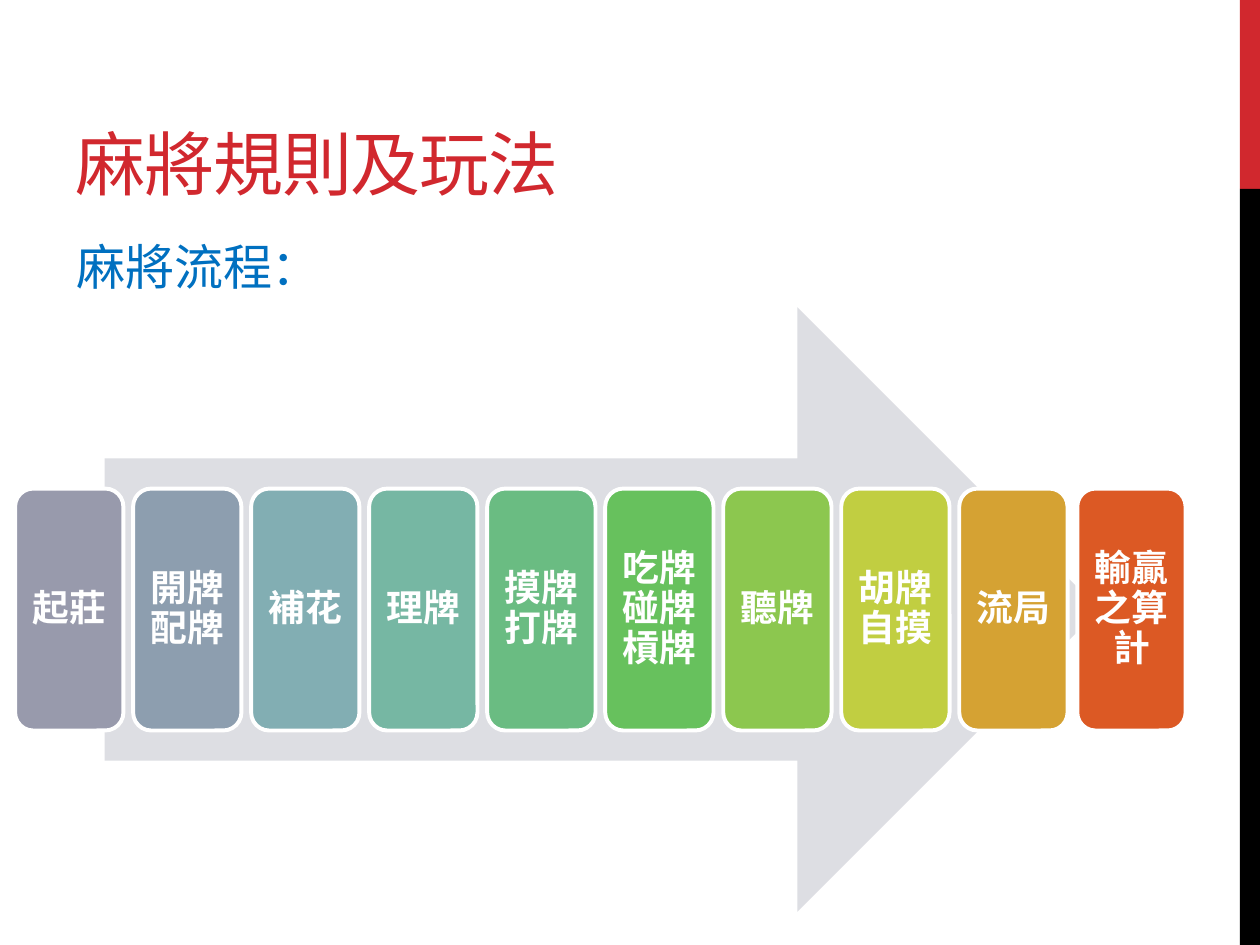
from dataclasses import dataclass

from pptx import Presentation, util as u
from pptx.dml.color import RGBColor
from pptx.enum import shapes, text

Pt = u.Pt


@dataclass(frozen=True)
class Theme:
    red: str = "D1282E"
    black: str = "000000"
    white: str = "FFFFFF"
    blue: str = "0070C0"
    arrow: str = "DDDEE3"
    heading_font: str = "Montserrat"
    body_font: str = "Arial"
    title_size: int = 40
    subtitle_size: int = 28
    step_size: int = 21


THEME = Theme()
STEPS = [
    ("起莊", "989AAC"),
    ("開牌配牌", "8D9EAF"),
    ("補花", "82AEB3"),
    ("理牌", "76B7A3"),
    ("摸牌打牌", "6ABC82"),
    ("吃牌碰牌槓牌", "67C15D"),
    ("聽牌", "8CC74F"),
    ("胡牌自摸", "C1CE41"),
    ("流局", "D5A233"),
    ("輸贏之算計", "DC5924"),
]


def write(shape, words, *, size, color, font=THEME.body_font, bold=False,
          align=text.PP_ALIGN.LEFT, anchor=text.MSO_ANCHOR.TOP,
          line_spacing=None, inset=None, tracking=None):
    frame = shape.text_frame
    frame.word_wrap = True
    frame.vertical_anchor = anchor
    if inset is not None:
        frame.margin_left = frame.margin_right = Pt(inset)
        frame.margin_top = frame.margin_bottom = Pt(inset)
    para = frame.paragraphs[0]
    para.alignment = align
    para.line_spacing = line_spacing
    span = para.add_run()
    span.text = words
    span.font.name = font
    span.font.size = Pt(size)
    span.font.bold = bold
    span.font.color.rgb = RGBColor.from_string(color)
    if tracking is not None:
        span.font._element.set("spc", str(round(tracking * 100)))


def add_block(page, kind, box, fill, outline=None):
    shape = page.shapes.add_shape(kind, *map(Pt, box))
    shape.shadow.inherit = False
    shape.fill.solid()
    shape.fill.fore_color.rgb = RGBColor.from_string(fill)
    if outline:
        shape.line.color.rgb = RGBColor.from_string(outline)
        shape.line.width = Pt(2.25)
    else:
        shape.line.fill.background()
    return shape


def add_side_band(page, box):
    left, top, width, height = box
    red_height = height / 5
    rectangle = shapes.MSO_SHAPE.RECTANGLE
    add_block(page, rectangle, (left, top, width, red_height), THEME.red)
    add_block(page, rectangle,
              (left, top + red_height, width, height - red_height), THEME.black)


def add_heading(page, box):
    left, top, width, height = box
    title_height = 108
    title = page.shapes.add_textbox(*map(Pt, (left, top, width, title_height)))
    write(title, "麻將規則及玩法", size=THEME.title_size, color=THEME.red,
          font=THEME.heading_font, anchor=text.MSO_ANCHOR.BOTTOM, tracking=-0.6)
    subtitle_height = 41
    subtitle = page.shapes.add_textbox(
        Pt(left + 0.5), Pt(top + height - subtitle_height),
        Pt(289.5), Pt(subtitle_height))
    write(subtitle, "麻將流程：", size=THEME.subtitle_size, color=THEME.blue)


def add_process(page, box):
    left, top, width, height = box
    arrow_margin = 51.2
    add_block(page, shapes.MSO_SHAPE.RIGHT_ARROW,
              (left + arrow_margin, top, width * 0.85, height), THEME.arrow)
    gap = 5.52
    step_width = (width - gap * (len(STEPS) - 1)) / len(STEPS)
    step_height = height * 0.4
    step_top = top + (height - step_height) / 2
    for index, (words, color) in enumerate(STEPS):
        step_left = left + index * (step_width + gap)
        step = add_block(page, shapes.MSO_SHAPE.ROUNDED_RECTANGLE,
                         (step_left, step_top, step_width, step_height),
                         color, THEME.white)
        write(step, words, size=THEME.step_size, color=THEME.white, bold=True,
              align=text.PP_ALIGN.CENTER, anchor=text.MSO_ANCHOR.MIDDLE,
              line_spacing=0.9, inset=6.3)


def main():
    deck = Presentation()
    deck.slide_width, deck.slide_height = Pt(720), Pt(540)
    page = deck.slides.add_slide(deck.slide_layouts[6])
    add_side_band(page, (708.5, 0, 11.5, 540))
    add_heading(page, (36, 12.2, 456, 160.6))
    add_process(page, (8.64, 175.5, 668.9, 345.6))
    deck.save("out.pptx")


if __name__ == "__main__":
    main()
